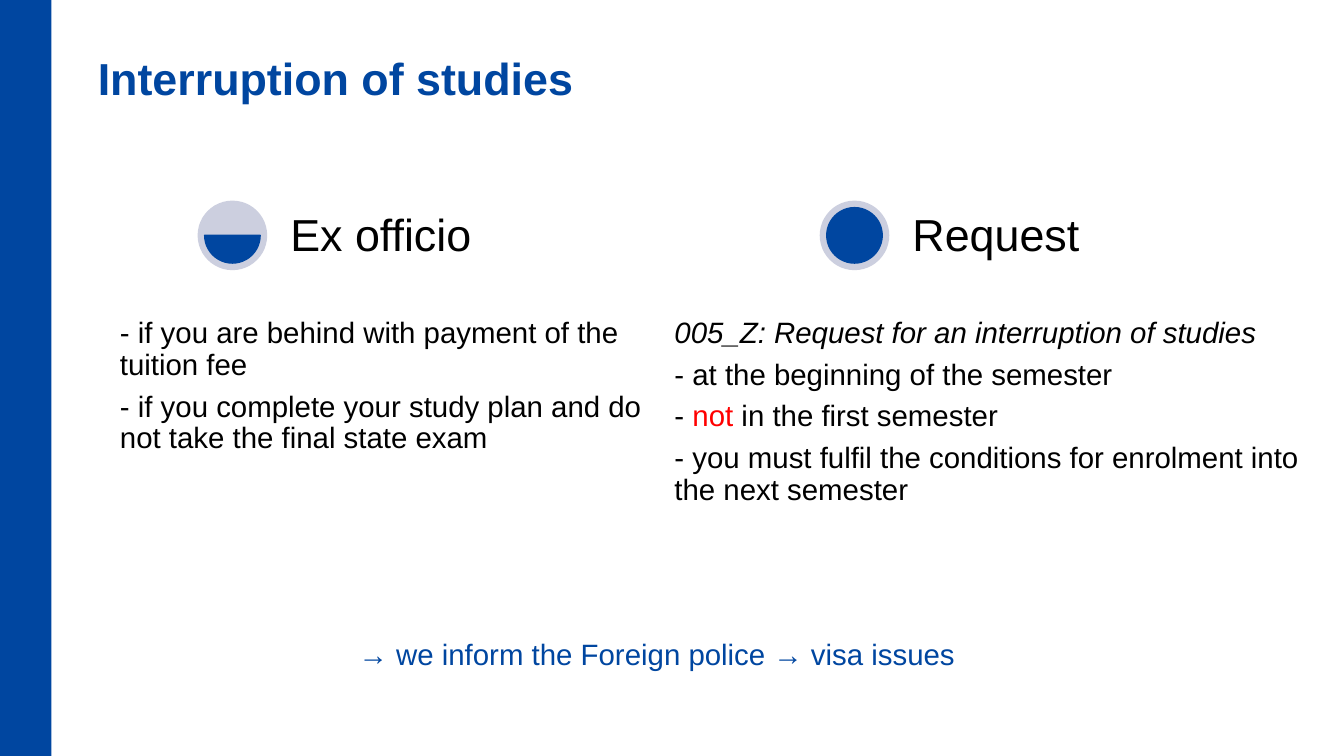
from pptx import Presentation
from pptx.dml.color import RGBColor
from pptx.enum.shapes import MSO_SHAPE as Preset
from pptx.enum.text import MSO_ANCHOR as Anchor, PP_ALIGN as Align
from pptx.util import Inches, Pt

BLUE = RGBColor(0x00, 0x46, 0xA0)
PALE = RGBColor(0xCC, 0xCF, 0xDF)
BLACK = RGBColor(0, 0, 0)
RED = RGBColor(0xFF, 0, 0)
WHITE = RGBColor(0xFF, 0xFF, 0xFF)

TITLE = "Interruption of studies"
FOOTER = "→ we inform the Foreign police → visa issues"
COLUMNS = [
    {
        "heading": "Ex officio",
        "icon_left": 1.96,
        "chord": (0, 108),
        "body_left": 1.13,
        "body_width": 5.35,
        "lines": [
            [("- if you are behind with payment of the tuition fee", {})],
            [("- if you complete your study plan and do not take the final state exam", {})],
        ],
    },
    {
        "heading": "Request",
        "icon_left": 8.13,
        "chord": (162, 162),
        "body_left": 6.63,
        "body_width": 6.7,
        "lines": [
            [("005_Z: Request for an interruption of studies", {"italic": True})],
            [("- at the beginning of the semester", {})],
            [("- ", {}), ("not", {"color": RED}), (" in the first semester", {})],
            [("- you must fulfil the conditions for enrolment into the next semester", {})],
        ],
    },
]
ICON_TOP, ICON_SIZE, ICON_INSET = 1.99, 0.69, 0.07
HEADING_OFFSET, HEADING_WIDTH = 0.83, 2.03
BODY_TOP, BODY_HEIGHT = 3.1, 2.47


def write_text(shape, lines, size=21, color=BLACK, bold=False, inset=0.0,
               anchor=Anchor.TOP, align=Align.LEFT, spacing=0.9, after=0, wrap=True):
    frame = shape.text_frame
    frame.word_wrap = wrap
    frame.vertical_anchor = anchor
    frame.margin_left = frame.margin_right = Inches(inset)
    frame.margin_top = frame.margin_bottom = Inches(inset)
    for index, line in enumerate(lines):
        paragraph = frame.add_paragraph() if index else frame.paragraphs[0]
        paragraph.alignment = align
        paragraph.line_spacing = spacing
        paragraph.space_before = Pt(0)
        paragraph.space_after = Pt(after)
        for text, style in line:
            run = paragraph.add_run()
            run.text = text
            run.font.name = "Arial"
            run.font.size = Pt(size)
            run.font.bold = bold
            run.font.italic = style.get("italic", False)
            run.font.color.rgb = style.get("color", color)


def add_box(slide, left, top, width, height):
    return slide.shapes.add_textbox(Inches(left), Inches(top), Inches(width), Inches(height))


def add_filled(slide, preset, left, top, width, height, color):
    shape = slide.shapes.add_shape(preset, Inches(left), Inches(top), Inches(width), Inches(height))
    shape.shadow.inherit = False
    shape.fill.solid()
    shape.fill.fore_color.rgb = color
    shape.line.fill.background()
    return shape


def add_column(slide, column):
    left = column["icon_left"]
    add_filled(slide, Preset.OVAL, left, ICON_TOP, ICON_SIZE, ICON_SIZE, PALE)
    inner = ICON_SIZE - 2 * ICON_INSET
    chord = add_filled(slide, Preset.CHORD, left + ICON_INSET, ICON_TOP + ICON_INSET,
                       inner, inner, BLUE)
    chord.adjustments[0], chord.adjustments[1] = column["chord"]
    chord.line.color.rgb = BLUE
    chord.line.width = Pt(1)
    body = add_box(slide, column["body_left"], BODY_TOP, column["body_width"], BODY_HEIGHT)
    write_text(body, column["lines"], inset=0.06, after=7)
    heading = add_box(slide, left + HEADING_OFFSET, ICON_TOP, HEADING_WIDTH, ICON_SIZE)
    write_text(heading, [[(column["heading"], {})]], size=32, inset=0.09, anchor=Anchor.BOTTOM)


def main():
    presentation = Presentation()
    presentation.slide_width = Inches(13.33)
    presentation.slide_height = Inches(7.5)
    slide = presentation.slides.add_slide(presentation.slide_layouts[5])
    slide.background.fill.solid()
    slide.background.fill.fore_color.rgb = WHITE

    add_filled(slide, Preset.RECTANGLE, 0, 0, 0.51, 7.5, BLUE)
    title = slide.shapes.title
    title.left, title.top = Inches(0.97), Inches(0.5)
    title.width, title.height = Inches(11.84), Inches(0.64)
    write_text(title, [[(TITLE, {})]], size=32, color=BLUE, bold=True, spacing=1.0)

    for column in COLUMNS:
        add_column(slide, column)

    footer = add_box(slide, 3.43, 6.26, 6.17, 0.45)
    write_text(footer, [[(FOOTER, {})]], color=BLUE, inset=0.05, align=Align.CENTER,
               spacing=1.0, wrap=False)
    presentation.save("out.pptx")


if __name__ == "__main__":
    main()
